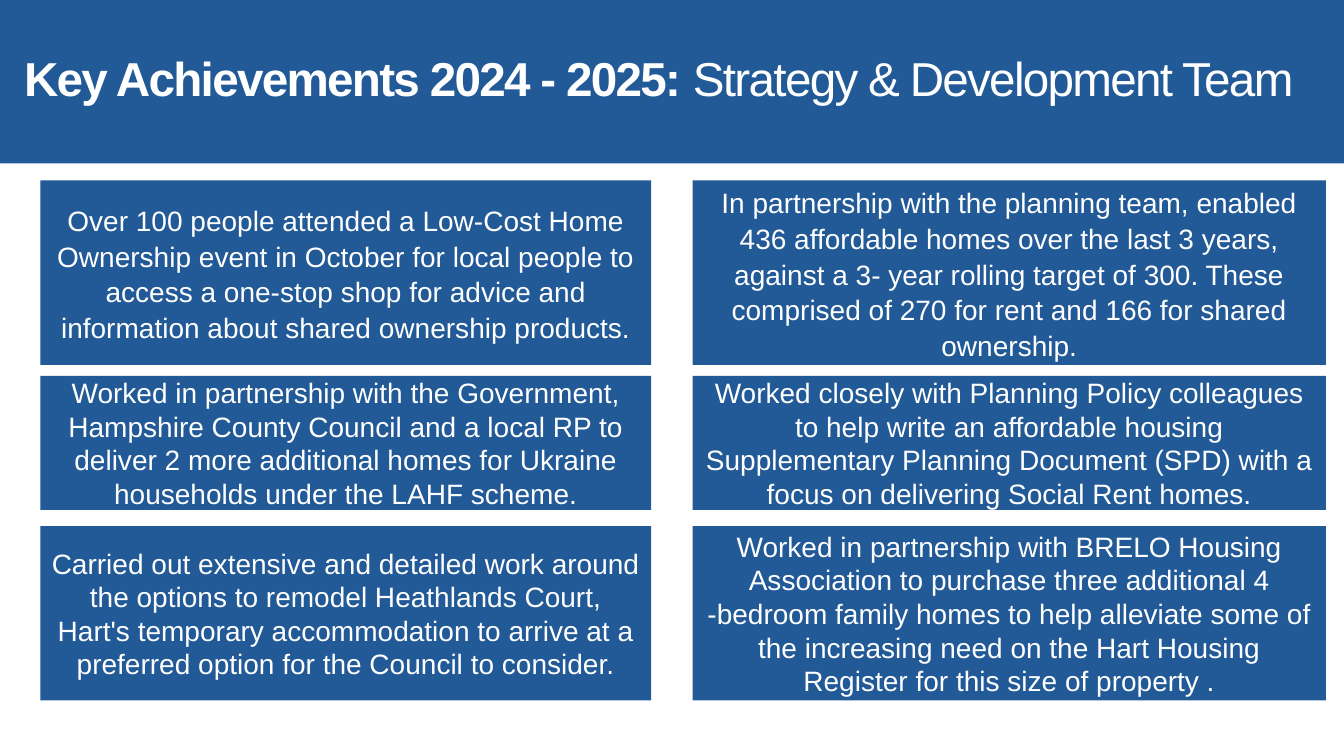
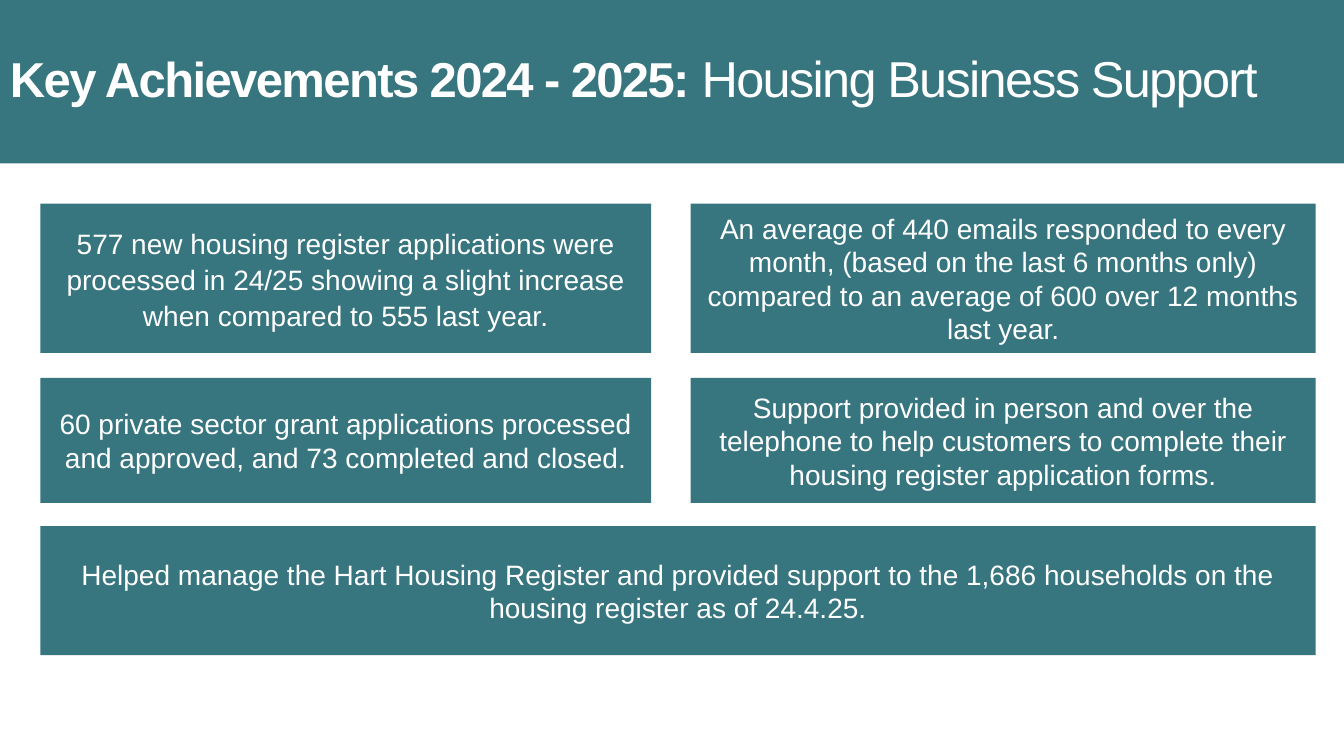
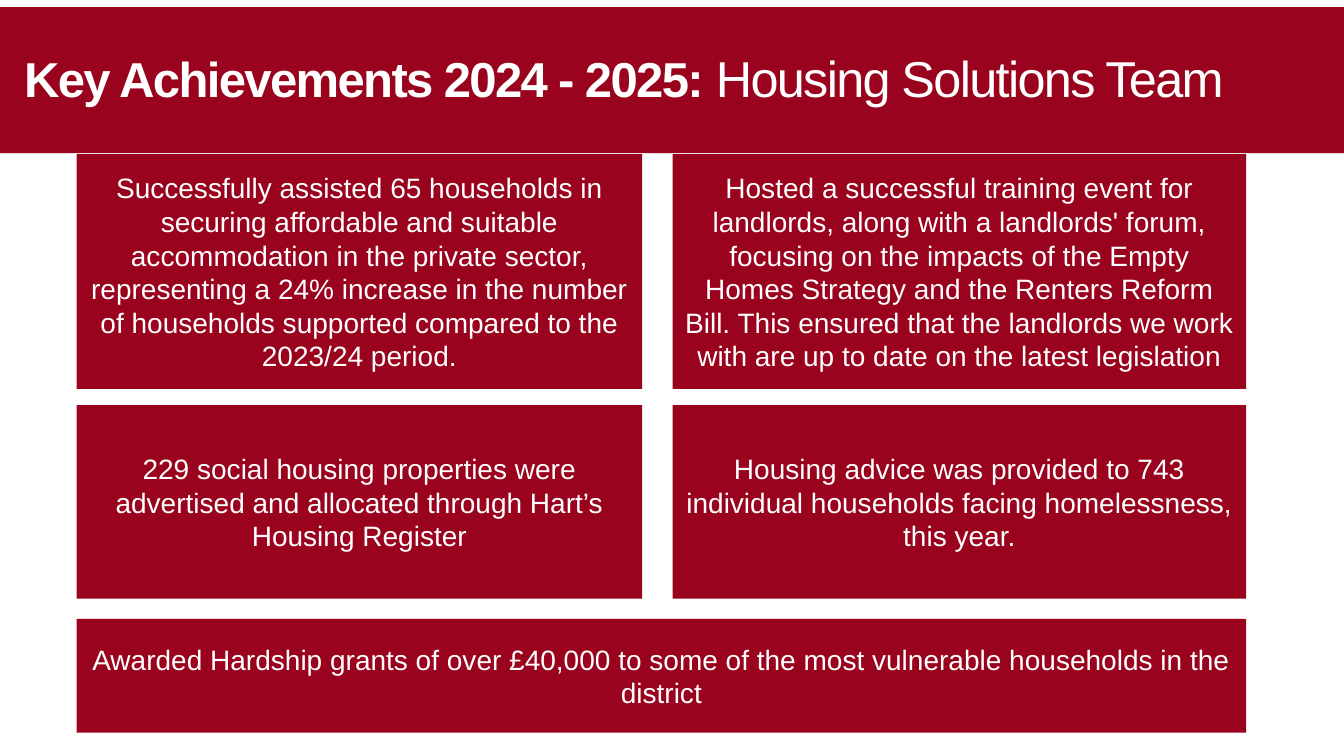
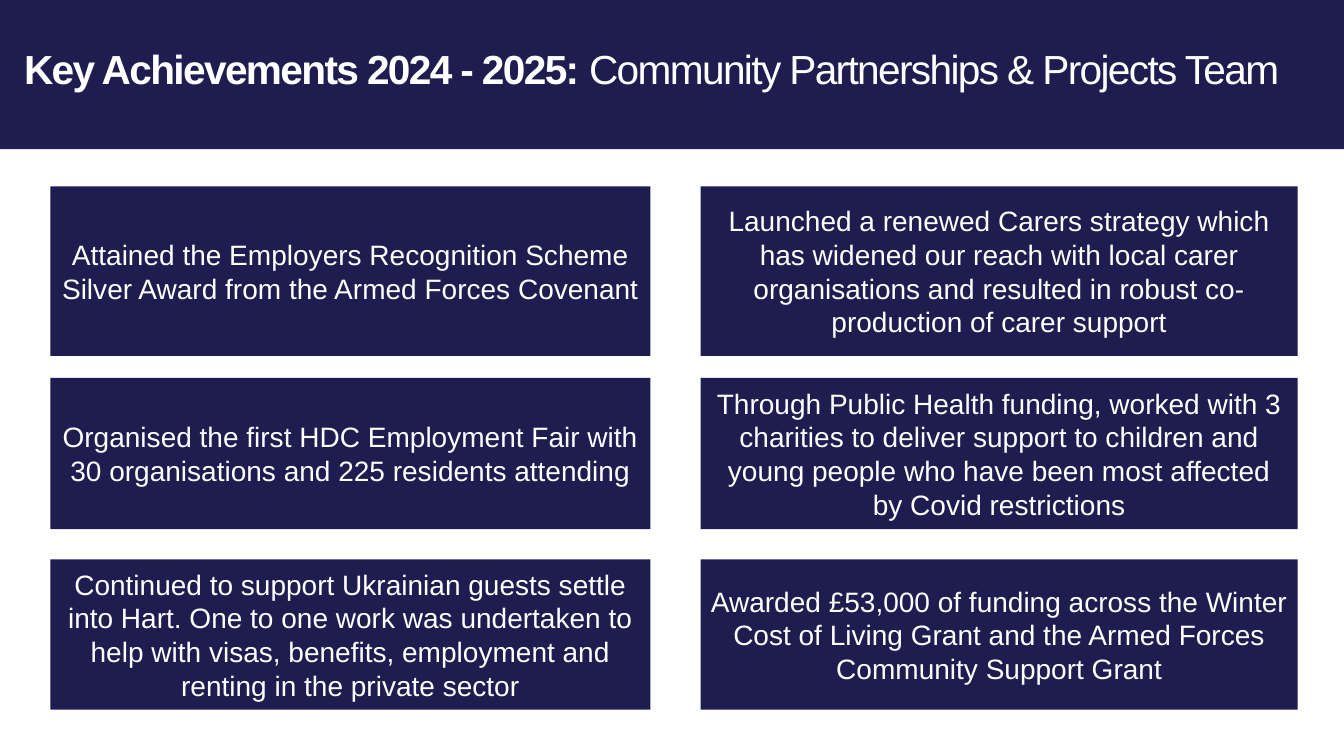
from dataclasses import dataclass

from pptx import Presentation
from pptx.dml.color import RGBColor
from pptx.enum import shapes, text
from pptx.util import Inches, Pt


@dataclass(frozen=True)
class Theme:
    font: str = "Arial"
    text_color: str = "FFFFFF"
    card_size: int = 20
    title_line_spacing: float = 0.85
    title_tracking: int = -120  # hundredths of a point
    loose_line_spacing: float = 1.07
    loose_space_after: int = 8
    blue: str = "225997"
    teal: str = "37757F"
    red: str = "9A031D"
    navy: str = "1F1D50"


THEME = Theme()
SLIDE_SIZE = (13.33, 7.5)
TITLE_LEAD = "Key Achievements 2024 - 2025: "

# band and rows: (top, height); columns: (left, width); title_box: (left, top, width, height),
# or None when the band itself holds the title. A row with one card spans both columns.
# loose: (row, column) of the cards set with wider line spacing.
TEAMS = [
    {
        "team": "Strategy & Development Team",
        "color": THEME.blue,
        "title_sizes": (34, 34),
        "band": (0, 1.62),
        "title_box": (0.14, 0.09, 13.07, 1.45),
        "columns": [(0.4, 6.06), (6.87, 6.28)],
        "rows": [(1.79, 1.83), (3.73, 1.33), (5.22, 1.73)],
        "loose": {(0, 0), (0, 1)},
        "cards": [
            [
                "Over 100 people attended a Low-Cost Home Ownership event in October for local "
                "people to access a one-stop shop for advice and information about shared "
                "ownership products.",
                "In partnership with the planning team, enabled 436 affordable homes over the "
                "last 3 years, against a 3- year rolling target of 300. These comprised of 270 "
                "for rent and 166 for shared ownership.",
            ],
            [
                "Worked in partnership with the Government, Hampshire County Council and a local "
                "RP to deliver 2 more additional homes for Ukraine households under the LAHF "
                "scheme.",
                "Worked closely with Planning Policy colleagues to help write an affordable "
                "housing Supplementary Planning Document (SPD) with a focus on delivering Social "
                "Rent homes.",
            ],
            [
                "Carried out extensive and detailed work around the options to remodel "
                "Heathlands Court, Hart's temporary accommodation to arrive at a preferred "
                "option for the Council to consider.",
                "Worked in partnership with BRELO Housing Association to purchase three "
                "additional 4 -bedroom family homes to help alleviate some of the increasing "
                "need on the Hart Housing Register for this size of property .",
            ],
        ],
    },
    {
        "team": "Housing Business Support",
        "color": THEME.teal,
        "title_sizes": (35, 36),
        "band": (0, 1.62),
        "title_box": None,
        "columns": [(0.4, 6.06), (6.85, 6.2)],
        "rows": [(2.02, 1.48), (3.75, 1.24), (5.22, 1.28)],
        "loose": {(0, 0)},
        "cards": [
            [
                "577 new housing register applications were processed in 24/25 showing a slight "
                "increase when compared to 555 last year.",
                "An average of 440 emails responded to every month, (based on the last 6 months "
                "only) compared to an average of 600 over 12 months last year.",
            ],
            [
                "60 private sector grant applications processed and approved, and 73 completed "
                "and closed.",
                "Support provided in person and over the telephone to help customers to complete "
                "their housing register application forms.",
            ],
            [
                "Helped manage the Hart Housing Register and provided support to the 1,686 "
                "households on the housing register as of 24.4.25.",
            ],
        ],
    },
    {
        "team": "Housing Solutions Team",
        "color": THEME.red,
        "title_sizes": (35, 36),
        "band": (0.07, 1.45),
        "title_box": (0.14, 0.09, 12.92, 1.45),
        "columns": [(0.76, 5.61), (6.67, 5.69)],
        "rows": [(1.53, 2.33), (4.02, 1.92), (6.14, 1.13)],
        "loose": set(),
        "cards": [
            [
                "Successfully assisted 65 households in securing affordable and suitable "
                "accommodation in the private sector, representing a 24% increase in the number "
                "of households supported compared to the 2023/24 period.",
                "Hosted a successful training event for landlords, along with a landlords' "
                "forum, focusing on the impacts of the Empty Homes Strategy and the Renters "
                "Reform Bill. This ensured that the landlords we work with are up to date on "
                "the latest legislation",
            ],
            [
                "229 social housing properties were advertised and allocated through Hart’s "
                "Housing Register",
                "Housing advice was provided to 743 individual households facing homelessness, "
                "this year.",
            ],
            [
                "Awarded Hardship grants of over £40,000 to some of the most vulnerable "
                "households in the district",
            ],
        ],
    },
    {
        "team": "Community Partnerships & Projects Team",
        "color": THEME.navy,
        "title_sizes": (29, 29),
        "band": (0, 1.48),
        "title_box": (0.14, 0.09, 13.03, 1.26),
        "columns": [(0.5, 5.95), (6.95, 5.92)],
        "rows": [(1.85, 1.68), (3.75, 1.5), (5.55, 1.49)],
        "loose": set(),
        "cards": [
            [
                "Attained the Employers Recognition Scheme Silver Award from the Armed Forces "
                "Covenant",
                "Launched a renewed Carers strategy which has widened our reach with local carer "
                "organisations and resulted in robust co-production of carer support",
            ],
            [
                "Organised the first HDC Employment Fair with 30 organisations and 225 residents "
                "attending",
                "Through Public Health funding, worked with 3 charities to deliver support to "
                "children and young people who have been most affected by Covid restrictions",
            ],
            [
                "Continued to support Ukrainian guests settle into Hart. One to one work was "
                "undertaken to help with visas, benefits, employment and renting in the private "
                "sector",
                "Awarded £53,000 of funding across the Winter Cost of Living Grant and the Armed "
                "Forces Community Support Grant",
            ],
        ],
    },
]


def add_panel(slide, box, color):
    panel = slide.shapes.add_shape(shapes.MSO_SHAPE.RECTANGLE, *map(Inches, box))
    panel.shadow.inherit = False
    panel.fill.solid()
    panel.fill.fore_color.rgb = RGBColor.from_string(color)
    panel.line.fill.background()
    return panel


def first_paragraph(shape, alignment):
    """Set up a wrapped, vertically centred frame and return its paragraph."""
    frame = shape.text_frame
    frame.word_wrap = True
    frame.vertical_anchor = text.MSO_ANCHOR.MIDDLE
    paragraph = frame.paragraphs[0]
    paragraph.alignment = alignment
    return paragraph


def style_run(run, size, bold=False):
    run.font.name = THEME.font
    run.font.size = Pt(size)
    run.font.bold = bold
    run.font.color.rgb = RGBColor.from_string(THEME.text_color)


def add_title(slide, team):
    top, height = team["band"]
    holder = add_panel(slide, (0, top, SLIDE_SIZE[0], height), team["color"])
    if team["title_box"]:
        holder = slide.shapes.add_textbox(*map(Inches, team["title_box"]))
    paragraph = first_paragraph(holder, text.PP_ALIGN.LEFT)
    paragraph.line_spacing = THEME.title_line_spacing
    parts = zip((TITLE_LEAD, team["team"]), team["title_sizes"], (True, False))
    for words, size, bold in parts:
        run = paragraph.add_run()
        run.text = words
        style_run(run, size, bold)
        run._r.get_or_add_rPr().set("spc", str(THEME.title_tracking))


def add_card(slide, box, color, words, loose):
    paragraph = first_paragraph(add_panel(slide, box, color), text.PP_ALIGN.CENTER)
    paragraph.text = words
    style_run(paragraph.runs[0], THEME.card_size)
    if loose:
        paragraph.line_spacing = THEME.loose_line_spacing
        paragraph.space_after = Pt(THEME.loose_space_after)


def add_cards(slide, team):
    columns = team["columns"]
    full_width = sum(columns[-1]) - columns[0][0]
    for row, ((top, height), cards) in enumerate(zip(team["rows"], team["cards"])):
        for column, words in enumerate(cards):
            left, width = columns[column]
            if len(cards) == 1:
                width = full_width
            loose = (row, column) in team["loose"]
            add_card(slide, (left, top, width, height), team["color"], words, loose)


def main():
    presentation = Presentation()
    presentation.slide_width, presentation.slide_height = map(Inches, SLIDE_SIZE)
    for team in TEAMS:
        slide = presentation.slides.add_slide(presentation.slide_layouts[6])
        add_title(slide, team)
        add_cards(slide, team)
    presentation.save("out.pptx")


if __name__ == "__main__":
    main()
